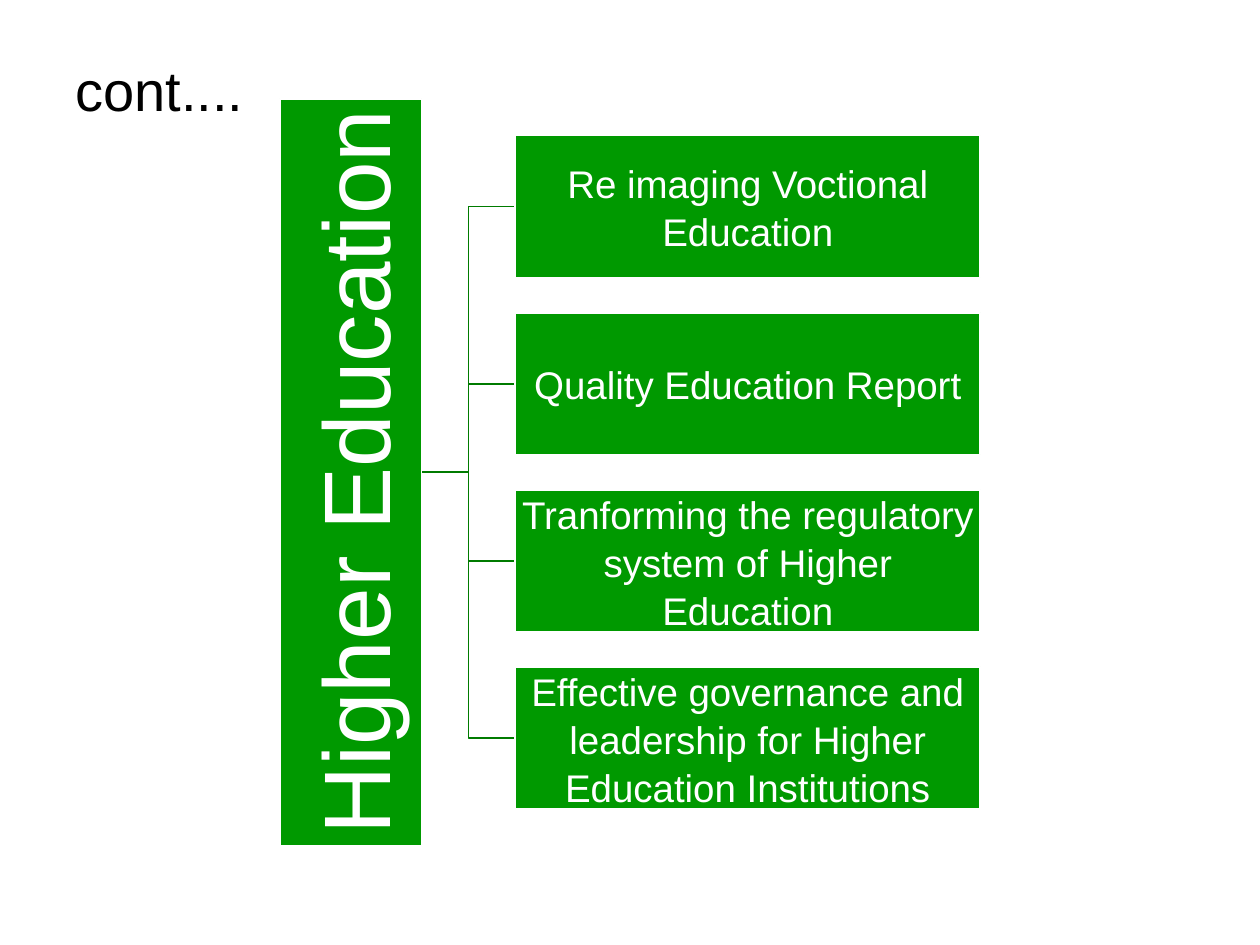
from pptx import Presentation
from pptx.dml.color import RGBColor
from pptx.enum import shapes, text
from pptx.util import Cm, Pt

TITLE = "cont...."
ROOT = "Higher Education"
BRANCHES = [
    "Re imaging Voctional Education",
    "Quality Education Report",
    "Tranforming the regulatory system of Higher Education",
    "Effective governance and leadership for Higher Education Institutions",
]
COLORS = {"box": "009900", "link": "007B00", "white": "FFFFFF", "title": "000000"}
FONT = "Arial"

BOX_H = 2.86
ROOT_LENGTH = 15.06
ROOT_X = 7.07
MID_Y = 9.52
BRANCH_LEFT, BRANCH_W = 10.39, 9.37
PITCH = 3.57


def rgb(name):
    return RGBColor.from_string(COLORS[name])


def style_text(p, size, color):
    for r in p.runs:
        r.font.name = FONT
        r.font.size = Pt(size)
        r.font.color.rgb = rgb(color)


def add_box(s, label, center_x, center_y, width, size, inset):
    sp = s.shapes.add_shape(
        shapes.MSO_SHAPE.RECTANGLE, Cm(center_x - width / 2),
        Cm(center_y - BOX_H / 2), Cm(width), Cm(BOX_H))
    sp.shadow.inherit = False
    sp.fill.solid()
    sp.fill.fore_color.rgb = rgb("box")
    sp.line.color.rgb = rgb("white")
    sp.line.width = Pt(1)
    tf = sp.text_frame
    tf.word_wrap = True
    tf.vertical_anchor = text.MSO_ANCHOR.MIDDLE
    tf.margin_left = tf.margin_right = Cm(inset)
    tf.margin_top = tf.margin_bottom = Cm(inset)
    tf.text = label
    p = tf.paragraphs[0]
    p.alignment = text.PP_ALIGN.CENTER
    p.line_spacing = 1.04
    style_text(p, size, "white")
    return sp


def add_link(s, start_x, end_x, end_y):
    mid_x = (start_x + end_x) / 2
    builder = s.shapes.build_freeform(Cm(start_x), Cm(MID_Y))
    points = [(mid_x, MID_Y), (mid_x, end_y), (end_x, end_y)]
    builder.add_line_segments([(Cm(x), Cm(y)) for x, y in points], close=False)
    sp = builder.convert_to_shape()
    sp.shadow.inherit = False
    sp.fill.background()
    sp.line.color.rgb = rgb("link")
    sp.line.width = Pt(1)


def add_title(s):
    sp = s.shapes.title
    sp.left, sp.top, sp.width, sp.height = Cm(1.27), Cm(1), Cm(22.86), Cm(17.04)
    tf = sp.text_frame
    tf.text = TITLE
    tf.vertical_anchor = text.MSO_ANCHOR.TOP
    tf.auto_size = text.MSO_AUTO_SIZE.NONE
    p = tf.paragraphs[0]
    p.alignment = text.PP_ALIGN.LEFT
    style_text(p, 32, "title")


def main():
    prs = Presentation()
    prs.slide_width, prs.slide_height = Cm(25.4), Cm(19.05)
    s = prs.slides.add_slide(prs.slide_layouts[5])
    add_title(s)

    first_y = MID_Y - PITCH * (len(BRANCHES) - 1) / 2
    centers = [first_y + i * PITCH for i in range(len(BRANCHES))]
    for y in centers:
        add_link(s, ROOT_X + BOX_H / 2, BRANCH_LEFT, y)

    root = add_box(s, ROOT, ROOT_X, MID_Y, ROOT_LENGTH, 54, 0.1)
    root.rotation = 270
    for label, y in zip(BRANCHES, centers):
        add_box(s, label, BRANCH_LEFT + BRANCH_W / 2, y, BRANCH_W, 22, 0.05)

    prs.save("out.pptx")


if __name__ == "__main__":
    main()
